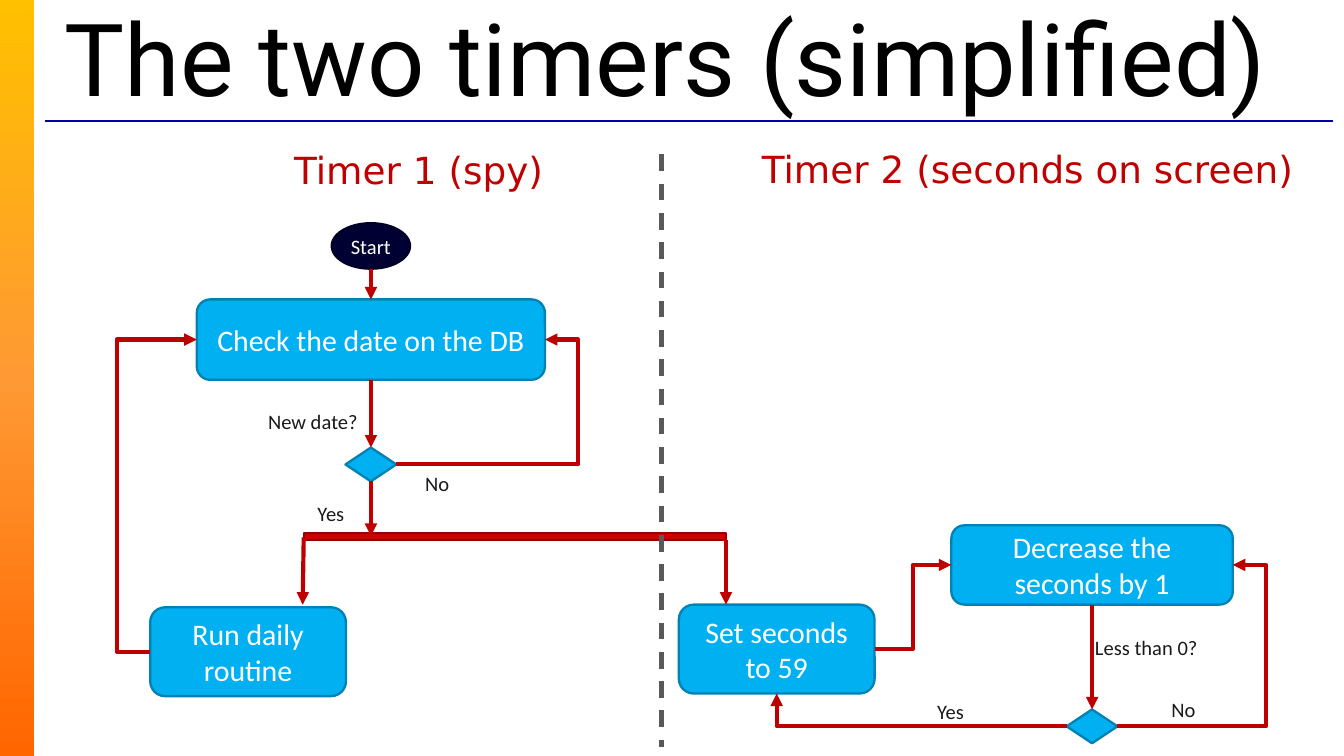
import lxml.etree
import pptx
import pptx.dml.color
import pptx.enum.dml
import pptx.enum.shapes
import pptx.enum.text
import pptx.oxml
import pptx.oxml.ns
import pptx.util

Cm = pptx.util.Cm
Pt = pptx.util.Pt
RGBColor = pptx.dml.color.RGBColor
Shape = pptx.enum.shapes.MSO_SHAPE
Connector = pptx.enum.shapes.MSO_CONNECTOR
Align = pptx.enum.text.PP_ALIGN
AutoSize = pptx.enum.text.MSO_AUTO_SIZE
qn = pptx.oxml.ns.qn

BLACK = RGBColor(0x00, 0x00, 0x00)
WHITE = RGBColor(0xFF, 0xFF, 0xFF)
INK = RGBColor(0x1A, 0x1A, 0x1A)
GREY = RGBColor(0x59, 0x59, 0x59)
RULE_BLUE = RGBColor(0x00, 0x00, 0xA5)
STEP_BLUE = RGBColor(0x00, 0xB0, 0xF0)
STEP_EDGE = RGBColor(0x00, 0x82, 0xB2)
NAVY = RGBColor(0x00, 0x00, 0x32)
NAVY_EDGE = RGBColor(0x00, 0x00, 0x25)
HEADING_RED = RGBColor(0xC0, 0x00, 0x00)
ARROW_RED = RGBColor(0xBF, 0x00, 0x00)
BAR_RED = RGBColor(0xCC, 0x00, 0x00)
BAR_EDGE = RGBColor(0x97, 0x00, 0x00)
BAND_STOPS = (
    (0, RGBColor(0xFF, 0xC0, 0x00)),
    (50, RGBColor(0xFF, 0x99, 0x33)),
    (100, RGBColor(0xFF, 0x66, 0x00)),
)

TOP, LEFT, BOTTOM, RIGHT = range(4)


def write(shape, text, size, color, font="Calibri", align=Align.CENTER,
          inset=None, wrap=True, auto_size=AutoSize.NONE):
    frame = shape.text_frame
    frame.auto_size = auto_size
    frame.word_wrap = wrap
    frame.vertical_anchor = pptx.enum.text.MSO_ANCHOR.MIDDLE
    if inset is not None:
        frame.margin_left = frame.margin_right = Cm(inset)
        frame.margin_top = frame.margin_bottom = Cm(inset)
    paragraph = frame.paragraphs[0]
    paragraph.alignment = align
    run = paragraph.add_run()
    run.text = text
    run.font.size = Pt(size)
    run.font.name = font
    run.font.color.rgb = color


def add_node(slide, kind, box, fill=STEP_BLUE, edge=STEP_EDGE):
    shape = slide.shapes.add_shape(kind, *map(Cm, box))
    shape.shadow.inherit = False
    shape.fill.solid()
    shape.fill.fore_color.rgb = fill
    shape.line.color.rgb = edge
    shape.line.width = Pt(1.25)
    return shape


def add_step(slide, text, box):
    step = add_node(slide, Shape.ROUNDED_RECTANGLE, box)
    write(step, text, 16, WHITE)
    return step


def add_label(slide, text, left, top, width=1.19):
    label = slide.shapes.add_textbox(Cm(left), Cm(top), Cm(width), Cm(0.48))
    write(label, text, 11, INK, inset=0)


def add_heading(slide, text, left, top, width):
    heading = slide.shapes.add_textbox(Cm(left), Cm(top), Cm(width), Cm(1.12))
    write(heading, text, 20, HEADING_RED, font="DejaVu Sans", align=Align.LEFT,
          wrap=False, auto_size=AutoSize.SHAPE_TO_FIT_TEXT)


def add_line(slide, begin, end, color, width=2.25, kind=Connector.STRAIGHT):
    line = slide.shapes.add_connector(kind, *map(Cm, begin + end))
    line.line.color.rgb = color
    line.line.width = Pt(width)
    lxml.etree.SubElement(line._element.spPr, qn("a:effectLst"))
    return line


def add_arrow(slide, begin, end, kind=Connector.STRAIGHT):
    arrow = add_line(slide, begin, end, ARROW_RED, kind=kind)
    tail = lxml.etree.SubElement(arrow.line._get_or_add_ln(), qn("a:tailEnd"))
    tail.set("type", "triangle")
    return arrow


def side(shape, site):
    """Return the middle of one side of a shape, in centimetres."""
    x = {LEFT: 0, RIGHT: 1}.get(site, 0.5)
    y = {TOP: 0, BOTTOM: 1}.get(site, 0.5)
    return ((shape.left + x * shape.width) / Cm(1),
            (shape.top + y * shape.height) / Cm(1))


def add_down_arrow(slide, upper, lower):
    arrow = add_arrow(slide, side(upper, BOTTOM), side(lower, TOP))
    if upper.auto_shape_type != Shape.OVAL:
        arrow.begin_connect(upper, BOTTOM)
    arrow.end_connect(lower, TOP)


def add_elbow(slide, begin, end, bend=None):
    """Bend at the given x; without one, turn a single corner."""
    arrow = add_arrow(slide, begin, end, kind=Connector.ELBOW)
    geometry = arrow._element.spPr.find(qn("a:prstGeom"))
    if bend is None:
        geometry.set("prst", "bentConnector2")
        return
    ratio = (bend - begin[0]) / (end[0] - begin[0])
    values = geometry.find(qn("a:avLst"))
    guide = lxml.etree.SubElement(values, qn("a:gd"))
    guide.set("name", "adj1")
    guide.set("fmla", f"val {round(ratio * 100000)}")


def add_side_band(slide, height):
    band = slide.shapes.add_shape(Shape.RECTANGLE, 0, 0, Cm(0.64), height)
    band.shadow.inherit = False
    band.line.fill.background()
    band.fill.gradient()
    band.fill.gradient_angle = 270
    stops = band._element.spPr.find(qn("a:gradFill")).find(qn("a:gsLst"))
    for stop in list(stops):
        stops.remove(stop)
    for position, color in BAND_STOPS:
        stop = lxml.etree.SubElement(stops, qn("a:gs"), pos=str(position * 1000))
        lxml.etree.SubElement(stop, qn("a:srgbClr"), val=str(color))


def add_title(slide, text):
    title = slide.shapes.title
    title.left, title.top = Cm(0.97), Cm(0.38)
    title.width, title.height = Cm(24.33), Cm(1.35)
    write(title, text, 54, BLACK, font="Roboto", align=Align.LEFT)


def add_flowchart(slide):
    start = add_node(slide, Shape.OVAL, (6.27, 4.22, 1.48, 0.86), NAVY, NAVY_EDGE)
    write(start, "Start", 11, WHITE, inset=0)
    check = add_step(slide, "Check the date on the DB", (3.72, 5.66, 6.58, 1.52))
    new_date = add_node(slide, Shape.DIAMOND, (6.53, 8.46, 0.96, 0.64))
    routine = add_step(slide, "Run daily routine", (2.84, 11.48, 3.7, 1.68))
    reset = add_step(slide, "Set seconds to 59", (12.83, 11.43, 3.7, 1.68))
    decrease = add_step(slide, "Decrease the seconds by 1", (17.98, 9.93, 5.32, 1.5))
    below_zero = add_node(slide, Shape.DIAMOND, (20.16, 13.41, 0.96, 0.64))
    add_node(slide, Shape.RECTANGLE, (5.74, 10.08, 7.98, 0.13), BAR_RED, BAR_EDGE)

    for upper, lower in ((start, check), (check, new_date), (decrease, below_zero)):
        add_down_arrow(slide, upper, lower)
    to_bar = add_arrow(slide, side(new_date, BOTTOM), (7.01, 10.13))
    to_bar.begin_connect(new_date, BOTTOM)
    add_arrow(slide, (5.74, 10.16), (5.72, 11.43))
    add_arrow(slide, (13.72, 10.2), (13.72, 11.43))

    add_elbow(slide, side(new_date, RIGHT), side(check, RIGHT), bend=10.93)
    add_elbow(slide, side(routine, LEFT), side(check, LEFT), bend=2.21)
    add_elbow(slide, side(reset, RIGHT), side(decrease, LEFT), bend=17.25)
    add_elbow(slide, side(below_zero, RIGHT), side(decrease, RIGHT), bend=23.93)
    add_elbow(slide, side(below_zero, LEFT), side(reset, BOTTOM))

    add_label(slide, "New date?", 4.57, 7.72, 2.69)
    add_label(slide, "No", 7.67, 8.89)
    add_label(slide, "Yes", 5.66, 9.47)
    add_label(slide, "Less than 0?", 20.32, 11.99, 2.69)
    add_label(slide, "No", 21.77, 13.16)
    add_label(slide, "Yes", 17.37, 13.21)


def main():
    presentation = pptx.Presentation()
    presentation.slide_width = Cm(25.4)
    presentation.slide_height = Cm(14.29)
    slide = presentation.slides.add_slide(presentation.slide_layouts[5])

    add_side_band(slide, presentation.slide_height)
    add_line(slide, (0.85, 2.29), (25.2, 2.29), RULE_BLUE, width=0.75)
    add_title(slide, "The two timers (simplified)")
    add_flowchart(slide)
    divider = add_line(slide, (12.5, 2.92), (12.5, 14.12), GREY)
    divider.line.dash_style = pptx.enum.dml.MSO_LINE.DASH
    add_heading(slide, "Timer 1 (spy)", 5.31, 2.64, 5.41)
    add_heading(slide, "Timer 2 (seconds on screen)", 14.15, 2.62, 10.74)

    presentation.save("out.pptx")


if __name__ == "__main__":
    main()
